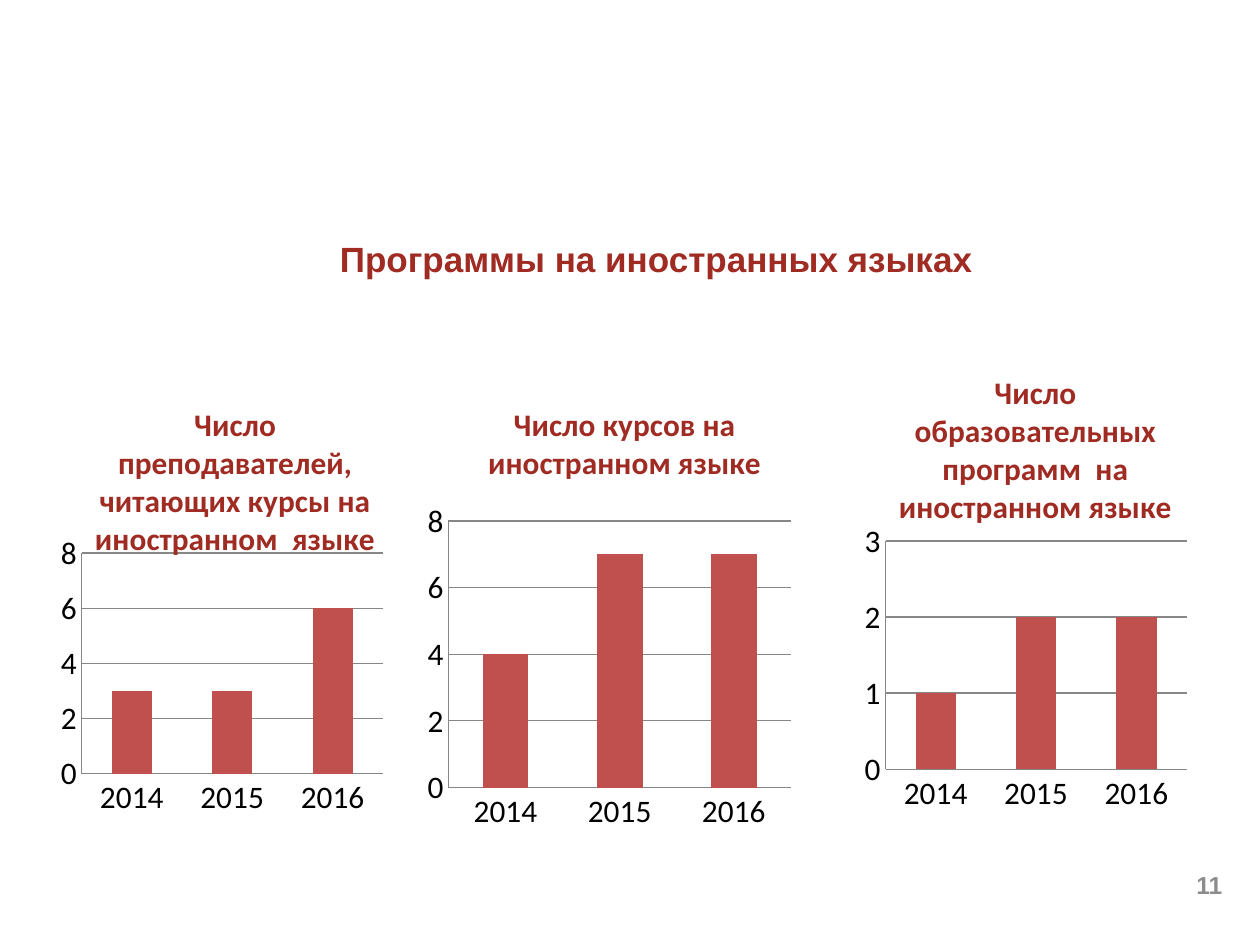
import dataclasses

import pptx
import pptx.chart.data
import pptx.dml.color
import pptx.enum.chart
import pptx.enum.text
import pptx.oxml
import pptx.oxml.ns
import pptx.util
from pptx.util import Cm

RGB = pptx.dml.color.RGBColor.from_string
ALIGN = pptx.enum.text.PP_ALIGN
ANCHOR = pptx.enum.text.MSO_ANCHOR
XL = pptx.enum.chart


@dataclasses.dataclass(frozen=True)
class Theme:
    heading: str = "9F2B22"
    bar: str = "C0504D"
    line: str = "878787"
    text: str = "000000"
    muted: str = "8C8C8C"
    title_font: str = "Arial"
    chart_font: str = "Calibri"
    title_size: float = 20
    chart_size: float = 17.9
    number_size: float = 14


THEME = Theme()


def set_font(font, name, size, color, bold=False):
    font.name = name
    font.size = pptx.util.Pt(size)
    font.bold = bold
    font.color.rgb = RGB(color)


def write(tf, text, *, font, size, color, bold=True, align=ALIGN.CENTER, anchor=None):
    tf.word_wrap = True
    if anchor is not None:
        tf.vertical_anchor = anchor
    p = tf.paragraphs[0]
    p.alignment = align
    r = p.add_run()
    r.text = text
    set_font(r.font, font, size, color, bold)


def place(sp, box):
    sp.left, sp.top, sp.width, sp.height = (Cm(v) for v in box)


def set_layout(parent, index, values, inner=False):
    for old in parent.findall(pptx.oxml.ns.qn("c:layout")):
        parent.remove(old)
    modes = ["xMode", "yMode"]
    parts = ['<c:layoutTarget val="inner"/>'] if inner else []
    parts += [f'<c:{m} val="edge"/>' for m in modes]
    parts += [f'<c:{k} val="{v}"/>' for k, v in zip("xywh", values)]
    parent.insert(index, pptx.oxml.parse_xml(
        f'<c:layout {pptx.oxml.ns.nsdecls("c")}><c:manualLayout>'
        f'{"".join(parts)}</c:manualLayout></c:layout>'))


def add_title(s, box, text):
    sp = s.shapes.title
    place(sp, box)
    tf = sp.text_frame
    tf.auto_size = pptx.enum.text.MSO_AUTO_SIZE.NONE
    write(tf, text, font=THEME.title_font, size=THEME.title_size,
          color=THEME.heading, anchor=ANCHOR.BOTTOM)


def add_page_number(s, box, text):
    sp = s.shapes.add_textbox(*(Cm(v) for v in box))
    write(sp.text_frame, text, font=THEME.title_font, size=THEME.number_size,
          color=THEME.muted, align=ALIGN.RIGHT, anchor=ANCHOR.MIDDLE)


def add_column_chart(s, box, title, values, top, step, title_at, plot):
    data = pptx.chart.data.CategoryChartData()
    data.categories = ["2014", "2015", "2016"]
    data.add_series("Series 1", values)
    chart = s.shapes.add_chart(XL.XL_CHART_TYPE.COLUMN_CLUSTERED,
                               *(Cm(v) for v in box), data).chart
    set_font(chart.font, THEME.chart_font, THEME.chart_size, THEME.text)
    chart.has_legend = False
    chart.has_title = True
    write(chart.chart_title.text_frame, title, font=THEME.chart_font,
          size=THEME.chart_size, color=THEME.heading)
    chart.chart_title.include_in_layout = False
    set_layout(chart.element.find(".//" + pptx.oxml.ns.qn("c:title")), 1, title_at)
    set_layout(chart.element.find(".//" + pptx.oxml.ns.qn("c:plotArea")), 0, plot, inner=True)

    bars = chart.plots[0]
    bars.gap_width = 150
    bars.vary_by_categories = False
    fill = bars.series[0].format.fill
    fill.solid()
    fill.fore_color.rgb = RGB(THEME.bar)

    axis = chart.value_axis
    axis.minimum_scale, axis.maximum_scale, axis.major_unit = 0, top, step
    axis.has_major_gridlines = True
    for ax in (axis, chart.category_axis):
        ax.major_tick_mark = ax.minor_tick_mark = XL.XL_TICK_MARK.NONE
    for part in (axis, axis.major_gridlines, chart.category_axis):
        part.format.line.color.rgb = RGB(THEME.line)
        part.format.line.width = pptx.util.Pt(0.75)


CHARTS = [
    dict(box=(0.51, 7.72, 7.59, 9.27),
         title="Число преподавателей, читающих курсы на иностранном  языке",
         values=(3, 3, 6), top=8, step=2,
         title_at=(0.17, 0.03), plot=(0.15, 0.37, 0.8, 0.48)),
    dict(box=(8.51, 7.72, 7.59, 9.27),
         title="Число курсов на иностранном языке",
         values=(4, 7, 7), top=8, step=2,
         title_at=(0.16, 0.03), plot=(0.07, 0.3, 0.91, 0.58)),
    dict(box=(16.79, 7.14, 7.59, 10.46),
         title="Число образовательных программ  на иностранном языке",
         values=(1, 2, 2), top=3, step=1,
         title_at=(0.16, 0.02), plot=(0.14, 0.36, 0.8, 0.44)),
]


def main():
    prs = pptx.Presentation()
    prs.slide_width, prs.slide_height = Cm(25.4), Cm(19.05)
    s = prs.slides.add_slide(prs.slide_layouts[5])
    add_title(s, (2.13, 3.76, 22.2, 2.01), "Программы на иностранных языках")
    for chart in CHARTS:
        add_column_chart(s, **chart)
    add_page_number(s, (18.97, 17.32, 5.92, 1.02), "11")
    prs.save("out.pptx")


if __name__ == "__main__":
    main()
